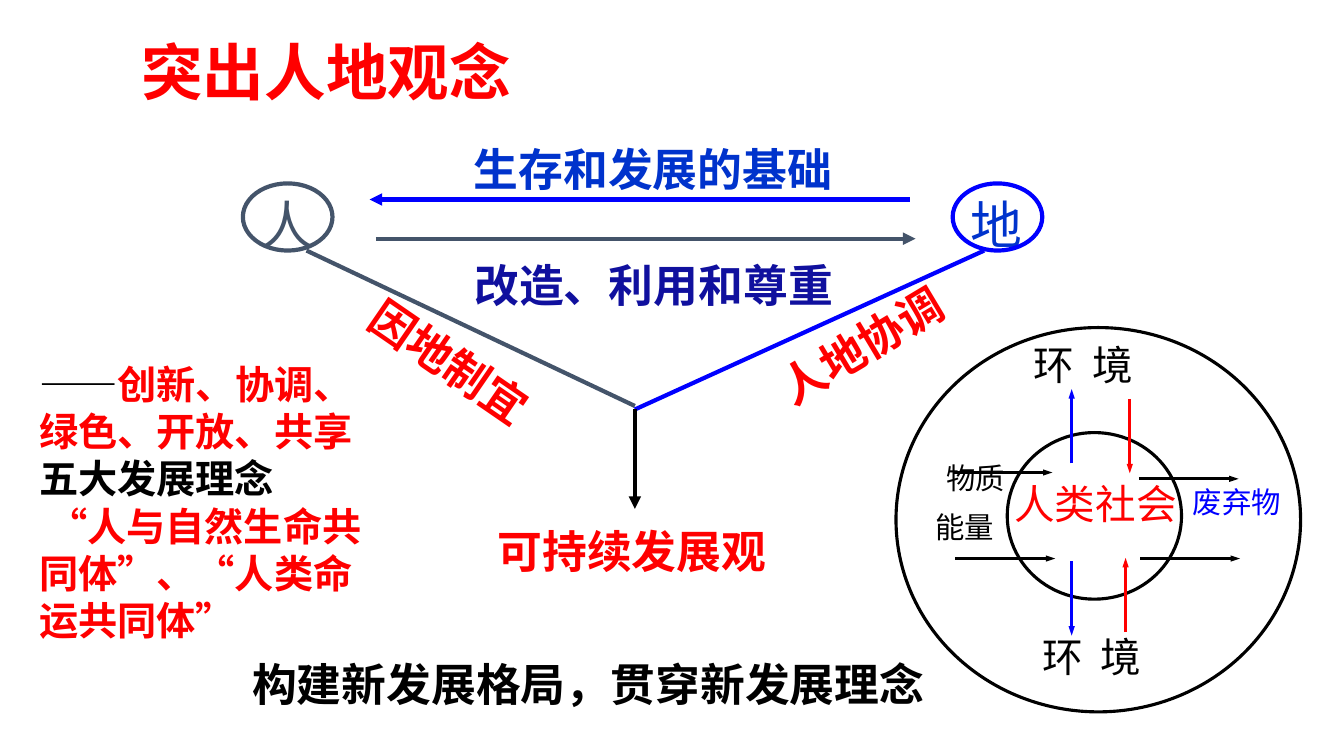
import pptx
import pptx.util
import pptx.dml.color
import pptx.enum.shapes
import pptx.enum.text
import pptx.oxml.ns
import lxml.etree
from dataclasses import dataclass

Pt = pptx.util.Pt


@dataclass(frozen=True)
class Theme:
    red: str = "FF0000"
    blue: str = "0000FF"
    royal: str = "0033CC"
    navy: str = "10109E"
    slate: str = "44546A"
    black: str = "000000"
    white: str = "FFFFFF"
    sans: str = "Noto Sans CJK SC"
    trad: str = "Noto Sans CJK TC"
    serif: str = "Times New Roman"
    title: float = 44
    sign: float = 37
    label: float = 32
    note: float = 28
    ring: float = 29
    small: float = 21
    thick: float = 3
    thin: float = 2.25


T = Theme()

# Content: boxes are left, top, width, height in points
TITLE = ("突出人地观念", (42, 19, 382, 63))

SIGNS = [
    ("人", (178, 132.5, 58, 55), T.slate),
    ("地", (684, 132.5, 58, 55), T.royal),
]
OVALS = [
    ((173.5, 131, 64, 48), T.slate),
    ((680.5, 131, 64, 48), T.blue),
]
LABELS = [
    ("生存和发展的基础", (306, 96.5, 321, 48), T.royal, 0),
    ("改造、利用和尊重", (314, 179, 306, 48), T.navy, 0),
    ("因地制宜", (236, 234, 170, 48), T.red, 34.5),
    ("可持续发展观", (306, 369, 291, 48), T.red, 0),
    ("人地协调", (523.5, 222.5, 184, 48), T.red, 329.1),
]
MOTTO = ("构建新发展格局，贯穿新发展理念", (173, 464, 497, 48))
NOTES = [
    [("——", T.black), ("创新、协调、绿色、开放、共享", T.red), ("五大发展理念", T.black)],
    [(" “人与自然生命共同体”、“人类命运共同体”", T.red)],
]
NOTE_BOX = (21, 253.5, 263.5, 211)

# Lines: from, to, colour, arrowhead
LINKS = [
    ((650, 142.5), (264, 142.5), T.blue, True),
    ((268.5, 170.5), (654, 170.5), T.slate, True),
    ((219, 179), (453.5, 290), T.slate, False),
    ((703, 179), (453.5, 292.5), T.blue, False),
    ((453.5, 292.5), (453.5, 363.5), T.black, True),
]

RINGS = [(640, 234, 289, 274.5), (719.5, 309, 124.5, 119)]
REACH = 71.25
DOWN = 53
FLOWS = [(680.5, 337.5), (682.5, 399), (813.5, 342), (814.5, 399)]
TRADES = [
    (765.5, 331, -DOWN, T.blue),
    (804, 451.5, -DOWN, T.red),
    (807, 285, DOWN, T.red),
    (765.5, 401, DOWN, T.blue),
]
WORDS = [
    ("人类社会", (724.5, 338.5, 124, 42), T.ring, T.red, T.serif, 0),
    ("环 境", (738.5, 238, 94, 44), T.ring, T.black, T.trad, 3.25),
    ("废弃物", (852, 341, 83, 35), T.small, T.blue, T.serif, 0),
    ("能量", (668, 358, 55.5, 37), T.small, T.black, T.serif, 0),
    ("物质", (676, 323, 55.5, 37), T.small, T.black, T.serif, 0),
    ("环 境", (744.5, 447, 94, 44), T.ring, T.black, T.trad, 3.25),
]


def assign(obj, values):
    for name, value in values.items():
        setattr(obj, name, value)


def hue(code):
    return pptx.dml.color.RGBColor.from_string(code)


def sub(node, tag, **attrs):
    return lxml.etree.SubElement(node, pptx.oxml.ns.qn(tag), attrs)


def add_run(par, words, size, tint, face=T.sans, bold=True, gap=0):
    run = par.add_run()
    run.text = words
    assign(run.font, dict(size=Pt(size), bold=bold, name=face))
    run.font.color.rgb = hue(tint)
    props = run.font._element
    sub(props, "a:ea", typeface=T.sans if face == T.serif else face)
    if gap:
        props.set("spc", str(round(gap * 100)))


def set_frame(shape, side=9, top=0, anchor="MIDDLE"):
    frame = shape.text_frame
    assign(frame, dict(
        word_wrap=True,
        auto_size=pptx.enum.text.MSO_AUTO_SIZE.NONE,
        vertical_anchor=getattr(pptx.enum.text.MSO_ANCHOR, anchor),
        margin_left=Pt(side), margin_right=Pt(side),
        margin_top=Pt(top), margin_bottom=Pt(top),
    ))
    return frame


def add_text(home, words, box, size, tint, center=False, side=9, turn=0, **look):
    shape = home.add_textbox(*map(Pt, box))
    shape.rotation = turn
    par = set_frame(shape, side).paragraphs[0]
    if center:
        par.alignment = pptx.enum.text.PP_ALIGN.CENTER
    add_run(par, words, size, tint, **look)


def add_oval(home, box, tint, width, fill=None):
    oval = home.add_shape(pptx.enum.shapes.MSO_SHAPE.OVAL, *map(Pt, box))
    oval.shadow.inherit = False
    if fill:
        oval.fill.solid()
        oval.fill.fore_color.rgb = hue(fill)
    else:
        oval.fill.background()
    oval.line.color.rgb = hue(tint)
    oval.line.width = Pt(width)


def add_line(home, start, end, tint, width, arrow=True, head="med"):
    kind = pptx.enum.shapes.MSO_CONNECTOR.STRAIGHT
    link = home.add_connector(kind, *map(Pt, start + end))
    link.line.color.rgb = hue(tint)
    link.line.width = Pt(width)
    if arrow:
        sub(link.line._get_or_add_ln(), "a:tailEnd", type="triangle", w=head, len="med")
    sub(link._element.spPr, "a:effectLst")


def main():
    deck = pptx.Presentation()
    assign(deck, dict(slide_width=Pt(960), slide_height=Pt(540)))
    slide = deck.slides.add_slide(deck.slide_layouts[5])
    home = slide.shapes

    # Title
    words, box = TITLE
    assign(home.title, dict(zip(("left", "top", "width", "height"), map(Pt, box))))
    par = set_frame(home.title).paragraphs[0]
    par.alignment = pptx.enum.text.PP_ALIGN.CENTER
    add_run(par, words, T.title, T.red)

    # People and land, with the links between them
    for words, box, tint in SIGNS:
        add_text(home, words, box, T.sign, tint, bold=False)
    for box, tint in OVALS:
        add_oval(home, box, tint, T.thick)
    for start, end, tint, arrow in LINKS:
        add_line(home, start, end, tint, T.thick, arrow)
    for words, box, tint, turn in LABELS:
        add_text(home, words, box, T.label, tint, center=True, turn=turn)

    # Rings of society and environment
    group = home.add_group_shape().shapes
    for box in RINGS:
        add_oval(group, box, T.black, T.thin, T.white)
    for left, top in FLOWS:
        add_line(group, (left, top), (left + REACH, top), T.black, T.thin, head="sm")
    for left, top, drop, tint in TRADES:
        add_line(group, (left, top), (left, top + drop), tint, T.thin, head="sm")
    for words, box, size, tint, face, gap in WORDS:
        add_text(group, words, box, size, tint, side=0, face=face, bold=False, gap=gap)

    # Motto and side notes
    add_text(home, *MOTTO, T.label, T.black, side=7.2)
    frame = set_frame(home.add_textbox(*map(Pt, NOTE_BOX)), 7.2, 3.6, "TOP")
    for i, parts in enumerate(NOTES):
        par = frame.add_paragraph() if i else frame.paragraphs[0]
        par.line_spacing = Pt(33.75)
        for words, tint in parts:
            add_run(par, words, T.note, tint)

    deck.save("out.pptx")


if __name__ == "__main__":
    main()
